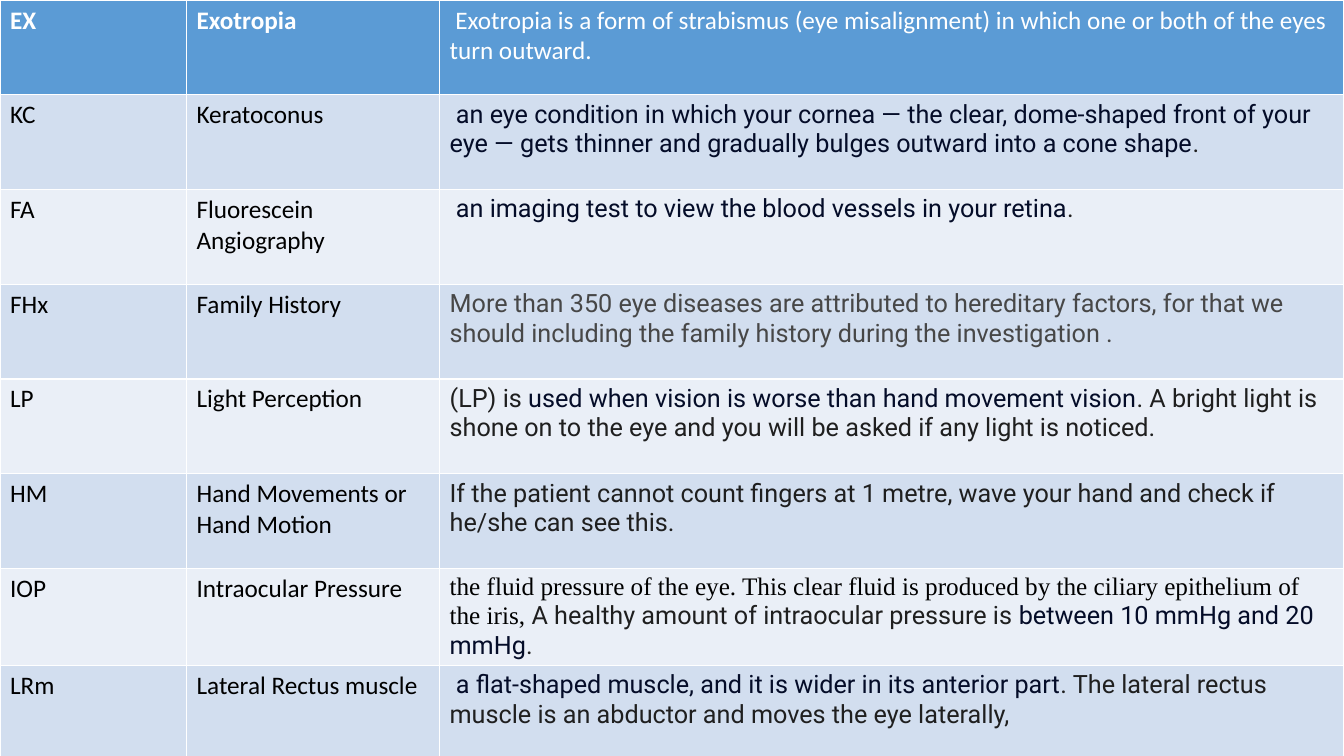
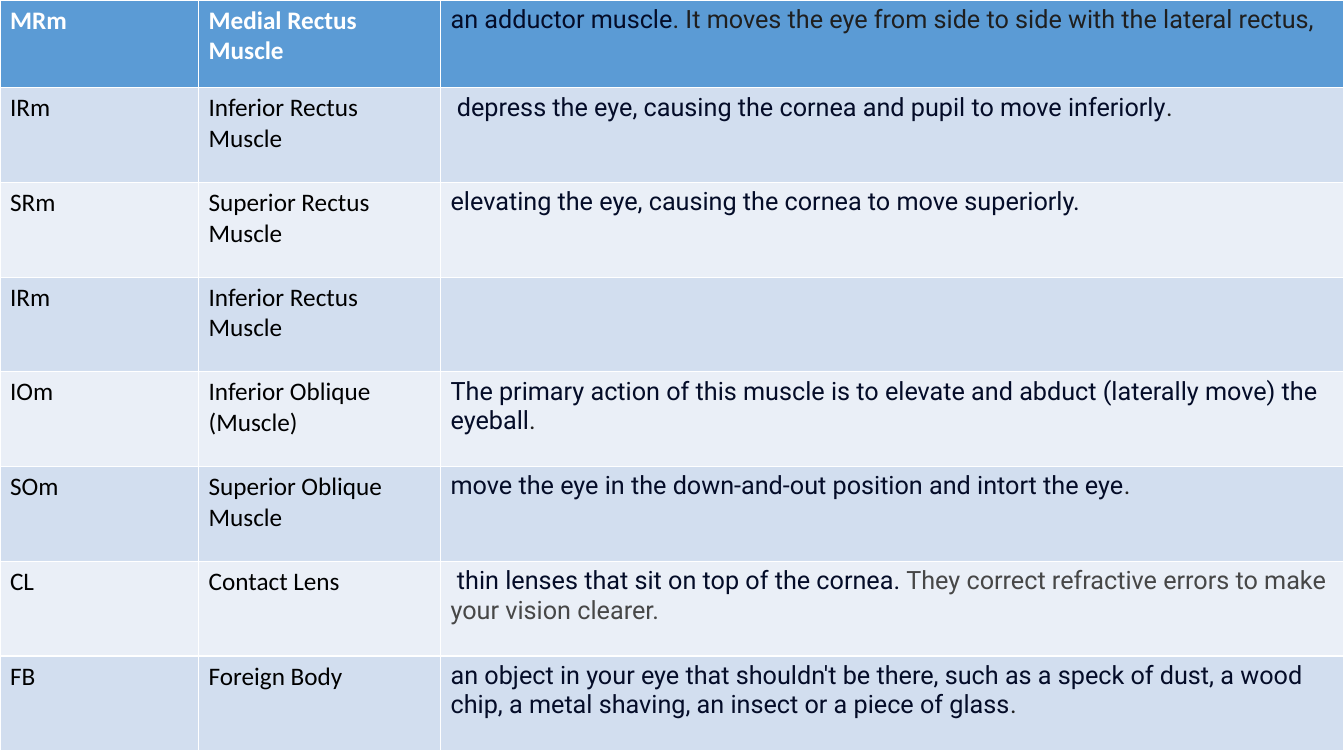
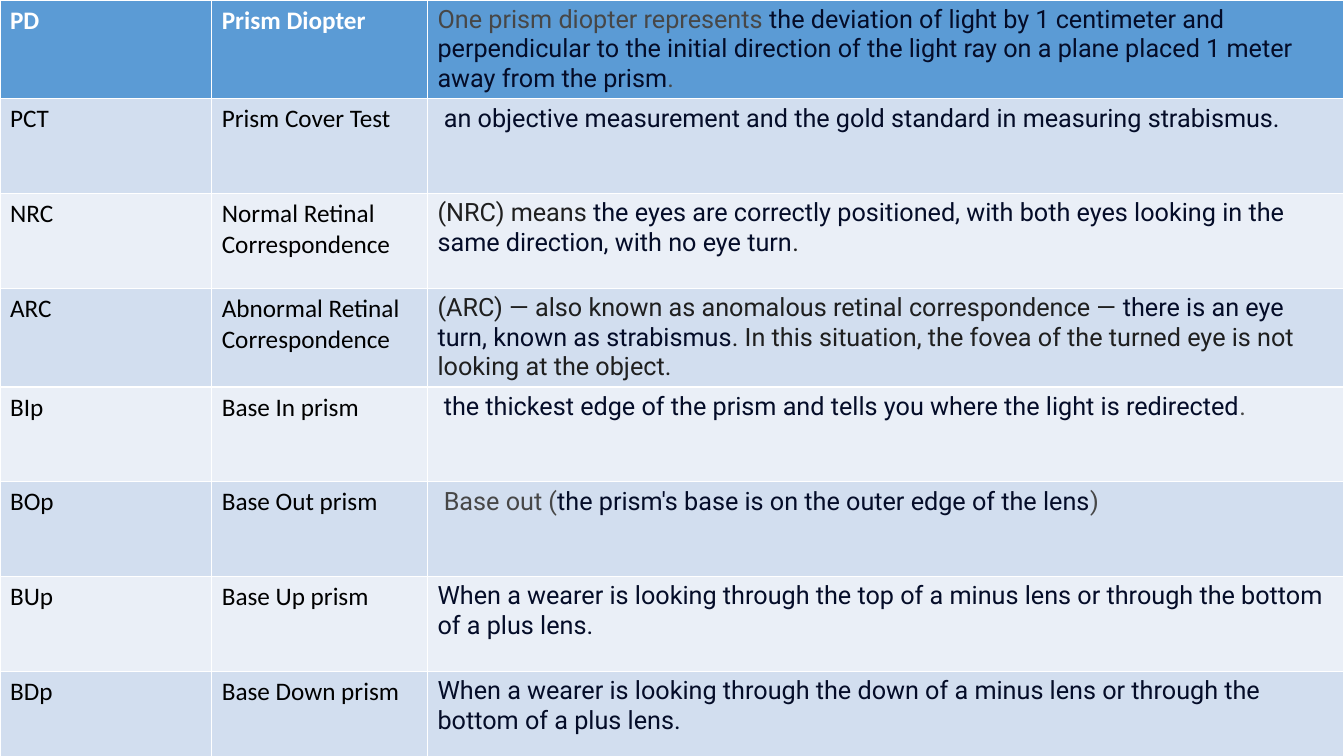
from pptx import Presentation
from pptx.dml.color import RGBColor
from pptx.util import Inches, Pt

WIDE, HIGH, ROW = 13.33, 7.5, 0.94

HEX = {
    "head": "5B9BD5",
    "dark": "D2DEEF",
    "pale": "EAEFF7",
    "white": "FFFFFF",
    "black": "000000",
    "navy": "040C28",
    "ink": "1F1F1F",
    "gray": "474747",
}

STYLES = {
    "title": ("white", {"name": "Calibri", "bold": True}),
    "white": ("white", {"name": "Calibri", "bold": False}),
    "label": ("black", {"name": "Calibri", "bold": False}),
    "serif": ("black", {"name": "Times New Roman", "bold": False}),
    "navy": ("navy", {"name": "Roboto", "bold": False}),
    "ink": ("ink", {"name": "Roboto", "bold": False}),
    "gray": ("gray", {"name": "Roboto", "bold": False}),
}

SIGNS = [
    ("EX", "Exotropia",
     ("white", " Exotropia is a form of strabismus (eye misalignment) in which "
               "one or both of the eyes turn outward.")),
    ("KC", "Keratoconus",
     ("ink", " "),
     ("navy", "an eye condition in which your cornea — the clear, dome-shaped front "
              "of your eye — gets thinner and gradually bulges outward into a cone shape"),
     ("ink", ".")),
    ("FA", "Fluorescein Angiography",
     ("ink", " "),
     ("navy", "an imaging test to view the blood vessels in your retina"),
     ("ink", ".")),
    ("FHx", "Family History",
     ("gray", "More than 350 eye diseases are attributed to hereditary factors, for that "
              "we should including the family history during the investigation .")),
    ("LP", "Light Perception",
     ("ink", "(LP) is "),
     ("navy", "used when vision is worse than hand movement vision"),
     ("ink", ". A bright light is shone on to the eye and you will be asked if any "
             "light is noticed. ")),
    ("HM", "Hand Movements or Hand Motion",
     ("ink", "If the patient cannot count fingers at 1 metre, wave your hand and check "
             "if he/she can see this.")),
    ("IOP", "Intraocular Pressure",
     ("serif", "the fluid pressure of the eye. This clear fluid is produced by the "
               "ciliary epithelium of the iris, "),
     ("ink", "A healthy amount of intraocular pressure is "),
     ("navy", "between 10 mmHg and 20 mmHg"),
     ("ink", ".")),
    ("LRm", "Lateral Rectus muscle",
     ("ink", " "),
     ("navy", "a flat-shaped muscle, and it is wider in its anterior part"),
     ("ink", ". The lateral rectus muscle is an abductor and moves the eye laterally, ")),
]

MUSCLES = [
    ("MRm", "Medial Rectus Muscle",
     ("navy", "an adductor muscle"),
     ("ink", ". It moves the eye from side to side with the lateral rectus,")),
    ("IRm", "Inferior Rectus Muscle",
     ("ink", " "),
     ("navy", "depress the eye, causing the cornea and pupil to move inferiorly"),
     ("ink", ".")),
    ("SRm", "Superior Rectus Muscle",
     ("navy", "elevating the eye, causing the cornea to move superiorly.")),
    ("IRm", "Inferior Rectus Muscle"),
    ("IOm", "Inferior Oblique (Muscle)",
     ("navy", "The primary action of this muscle is to elevate and abduct (laterally "
              "move) the eyeball"),
     ("ink", ".")),
    ("SOm", "Superior Oblique Muscle",
     ("navy", "move the eye in the down-and-out position and intort the eye"),
     ("ink", ".")),
    ("CL", "Contact Lens",
     ("gray", " "),
     ("navy", "thin lenses that sit on top of the cornea."),
     ("gray", " They correct refractive errors to make your vision clearer.")),
    ("FB", "Foreign Body",
     ("navy", "an object in your eye that shouldn't be there, such as a speck of dust, "
              "a wood chip, a metal shaving, an insect or a piece of glass"),
     ("ink", ".")),
]

PRISMS = [
    ("PD", "Prism Diopter",
     ("gray", "One prism diopter represents "),
     ("navy", "the deviation of light by 1 centimeter and perpendicular to the initial "
              "direction of the light ray on a plane placed 1 meter away from the prism"),
     ("gray", ".")),
    ("PCT", "Prism Cover Test",
     ("ink", " "),
     ("navy", "an objective measurement and the gold standard in measuring strabismus.")),
    ("NRC", "Normal Retinal Correspondence",
     ("ink", "(NRC) means "),
     ("navy", "the eyes are correctly positioned, with both eyes looking in the same "
              "direction, with no eye turn"),
     ("ink", ".")),
    ("ARC", "Abnormal Retinal Correspondence",
     ("ink", "(ARC) — also known as anomalous retinal correspondence — "),
     ("navy", "there is an eye turn, known as strabismus"),
     ("ink", ". In this situation, the fovea of the turned eye is not looking at the "
             "object.")),
    ("BIp", "Base In prism",
     ("gray", " "),
     ("navy", "the thickest edge of the prism and tells you where the light is redirected"),
     ("gray", ".")),
    ("BOp", "Base Out prism",
     ("gray", " Base out ("),
     ("navy", "the prism's base is on the outer edge of the lens"),
     ("gray", ")")),
    ("BUp", "Base Up prism",
     ("navy", "When a wearer is looking through the top of a minus lens or through the "
              "bottom of a plus lens.")),
    ("BDp", "Base Down prism",
     ("navy", "When a wearer is looking through the down of a minus lens or through the "
              "bottom of a plus lens.")),
]


def color(key):
    return RGBColor.from_string(HEX[key])


def fill_cell(cell, shade, parts):
    cell.fill.solid()
    cell.fill.fore_color.rgb = color(shade)
    para = cell.text_frame.paragraphs[0]
    para.font.size = Pt(18)
    for style, words in parts:
        run = para.add_run()
        run.text = words
        tint, look = STYLES[style]
        run.font.color.rgb = color(tint)
        for key, value in {"size": Pt(18), **look}.items():
            setattr(run.font, key, value)


def add_terms(slide, box, cols, top, terms):
    left, upper, width = box
    highs = [top] + [ROW] * (len(terms) - 1)
    widths = [*cols, width - sum(cols)]
    table = slide.shapes.add_table(
        len(terms), len(widths), Inches(left), Inches(upper),
        Inches(width), Inches(sum(highs))).table
    for col, size in zip(table.columns, widths):
        col.width = Inches(size)
    for i, (short, name, *parts) in enumerate(terms):
        table.rows[i].height = Inches(highs[i])
        shade = "head" if i == 0 else "dark" if i % 2 else "pale"
        style = "label" if i else "title"
        row = [[(style, short)], [(style, name)], parts]
        for j, cell in enumerate(row):
            fill_cell(table.cell(i, j), shade, cell)


def main():
    deck = Presentation()
    deck.slide_width, deck.slide_height = Inches(WIDE), Inches(HIGH)
    for cols, top, terms in [
        ((1.85, 2.51), ROW, SIGNS),
        ((1.97, 2.4), 0.87, MUSCLES),
        ((2.1, 2.14), ROW, PRISMS),
    ]:
        slide = deck.slides.add_slide(deck.slide_layouts[6])
        add_terms(slide, (0, 0, WIDE), cols, top, terms)
    deck.save("out.pptx")


if __name__ == "__main__":
    main()
